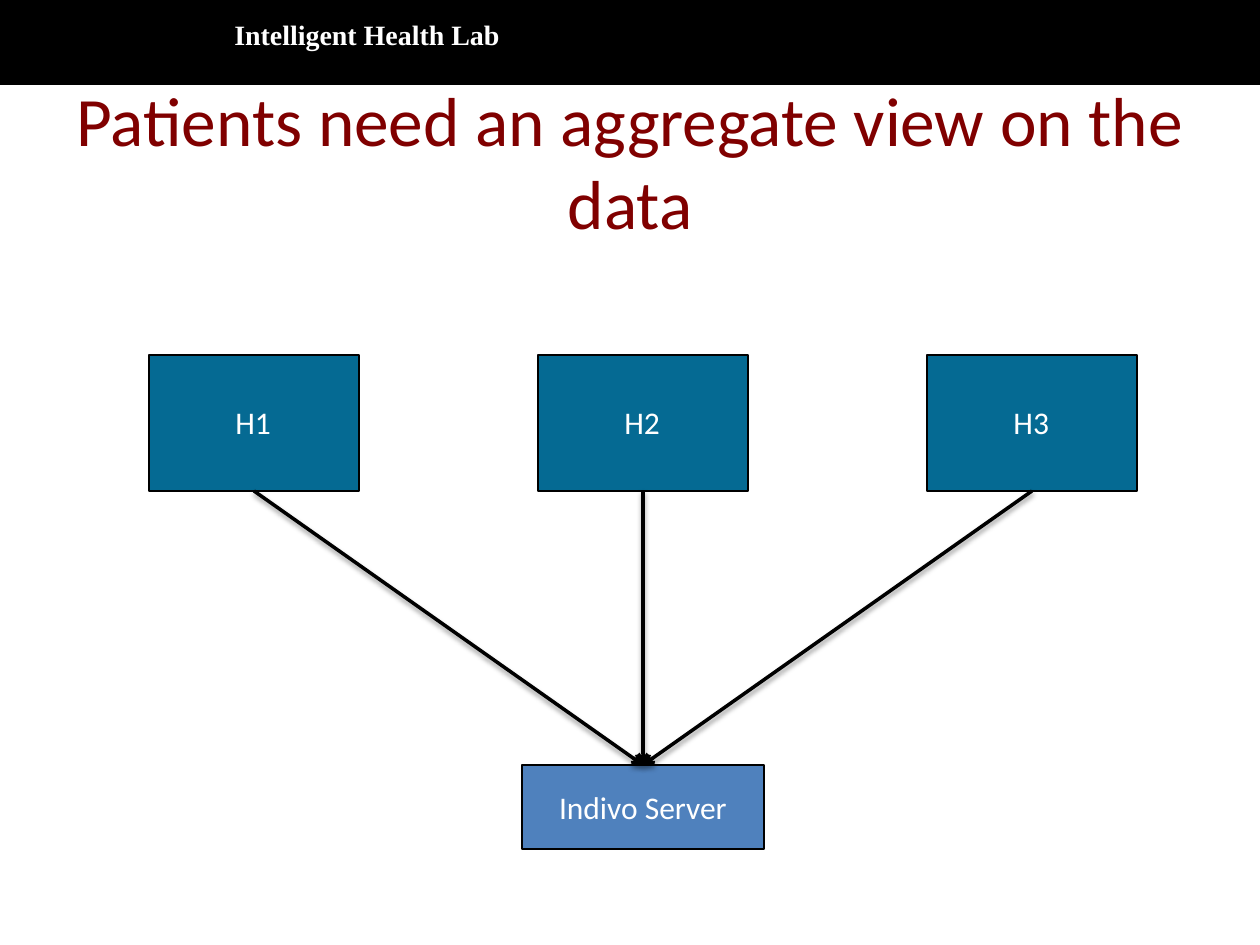
from dataclasses import dataclass

from lxml.etree import SubElement
from pptx import Presentation
from pptx.dml.color import RGBColor
from pptx.enum.shapes import MSO_CONNECTOR as Connector, MSO_SHAPE as Preset
from pptx.enum.text import MSO_ANCHOR as Anchor, MSO_AUTO_SIZE as AutoSize, PP_ALIGN as Align
from pptx.oxml import parse_xml
from pptx.oxml.ns import nsdecls, qn
from pptx.shapes.autoshape import Shape
from pptx.util import Emu, Pt

PX_PER_INCH = 126


@dataclass(frozen=True)
class Theme:
    black: str = "000000"
    white: str = "FFFFFF"
    heading: str = "800000"
    hospital: str = "056A93"
    server: str = "4F81BD"
    body_font: str = "Calibri"
    banner_font: str = "Times New Roman"
    title_size: float = 39.6
    label_size: float = 18
    banner_size: float = 16
    outline: float = 0.75
    arrow: float = 2


@dataclass(frozen=True)
class Box:
    left: int
    top: int
    width: int
    height: int

    def emu(self) -> tuple[Emu, ...]:
        return tuple(px(n) for n in (self.left, self.top, self.width, self.height))


THEME = Theme()
BOTTOM, TOP = 2, 0  # connection sites of a rectangle
HOSPITALS = ("H1", "H2", "H3")
FIRST_HOSPITAL = Box(149, 355, 210, 136)
HOSPITAL_STEP = 389


def px(length: int) -> Emu:
    return Emu(round(length * 914400 / PX_PER_INCH))


def write(shape: Shape, text: str, size: float, color: str = THEME.white,
          font: str = THEME.body_font, bold: bool = False,
          align: Align = Align.LEFT) -> None:
    shape.text_frame.text = text
    paragraph = shape.text_frame.paragraphs[0]
    paragraph.alignment = align
    paragraph.font.name = font
    paragraph.font.size = Pt(size)
    paragraph.font.bold = bold
    paragraph.font.color.rgb = RGBColor.from_string(color)


def add_rectangle(shapes, box: Box, fill: str) -> Shape:
    rectangle = shapes.add_shape(Preset.RECTANGLE, *box.emu())
    rectangle.shadow.inherit = False
    rectangle.fill.solid()
    rectangle.fill.fore_color.rgb = RGBColor.from_string(fill)
    rectangle.line.color.rgb = RGBColor.from_string(THEME.black)
    rectangle.line.width = Pt(THEME.outline)
    return rectangle


def add_label(shapes, box: Box) -> Shape:
    label = shapes.add_textbox(*box.emu())
    label.text_frame.word_wrap = True
    return label


def add_hospital(shapes, name: str, box: Box) -> Shape:
    """Group a hospital's box with its label and return the box."""
    group = shapes.add_group_shape()
    hospital = add_rectangle(group.shapes, box, THEME.hospital)
    label = add_label(group.shapes, Box(box.left + 74, box.top + 42, 95, 50))
    write(label, name, THEME.label_size)
    return hospital


def add_arrow(shapes, source: Shape, target: Shape) -> None:
    arrow = shapes.add_connector(Connector.STRAIGHT, 0, 0, 0, 0)
    arrow.begin_connect(source, BOTTOM)
    arrow.end_connect(target, TOP)
    arrow.line.color.rgb = RGBColor.from_string(THEME.black)
    arrow.line.width = Pt(THEME.arrow)
    SubElement(arrow.line._get_or_add_ln(), qn("a:tailEnd"), type="arrow")
    arrow._element.spPr.append(parse_xml(
        f'<a:effectLst {nsdecls("a")}>'
        f'<a:outerShdw blurRad="{Pt(3.1)}" dist="{Pt(1.6)}" dir="5400000" rotWithShape="0">'
        f'<a:srgbClr val="{THEME.black}"><a:alpha val="38000"/></a:srgbClr>'
        '</a:outerShdw></a:effectLst>'))


def main() -> None:
    presentation = Presentation()
    presentation.slide_width, presentation.slide_height = px(1260), px(945)
    slide = presentation.slides.add_slide(presentation.slide_layouts[5])
    shapes = slide.shapes

    title = shapes.title
    title.left, title.top, title.width, title.height = Box(63, 82, 1134, 157).emu()
    title.text_frame.auto_size = AutoSize.NONE
    title.text_frame.vertical_anchor = Anchor.MIDDLE
    write(title, "Patients need an aggregate view on the data", THEME.title_size,
          THEME.heading, align=Align.CENTER)

    add_rectangle(shapes, Box(0, 0, 1260, 84), THEME.black)
    lab = add_label(shapes, Box(222, 11, 494, 47))
    write(lab, "Intelligent Health Lab", THEME.banner_size,
          font=THEME.banner_font, bold=True)

    first = FIRST_HOSPITAL
    hospitals = [
        add_hospital(shapes, name, Box(first.left + i * HOSPITAL_STEP, first.top,
                                       first.width, first.height))
        for i, name in enumerate(HOSPITALS)
    ]

    server = add_rectangle(shapes, Box(522, 765, 242, 84), THEME.server)
    server.text_frame.word_wrap = False
    server.text_frame.vertical_anchor = Anchor.MIDDLE
    write(server, "Indivo Server", THEME.label_size, align=Align.CENTER)

    for hospital in hospitals:
        add_arrow(shapes, hospital, server)

    presentation.save("out.pptx")


if __name__ == "__main__":
    main()
